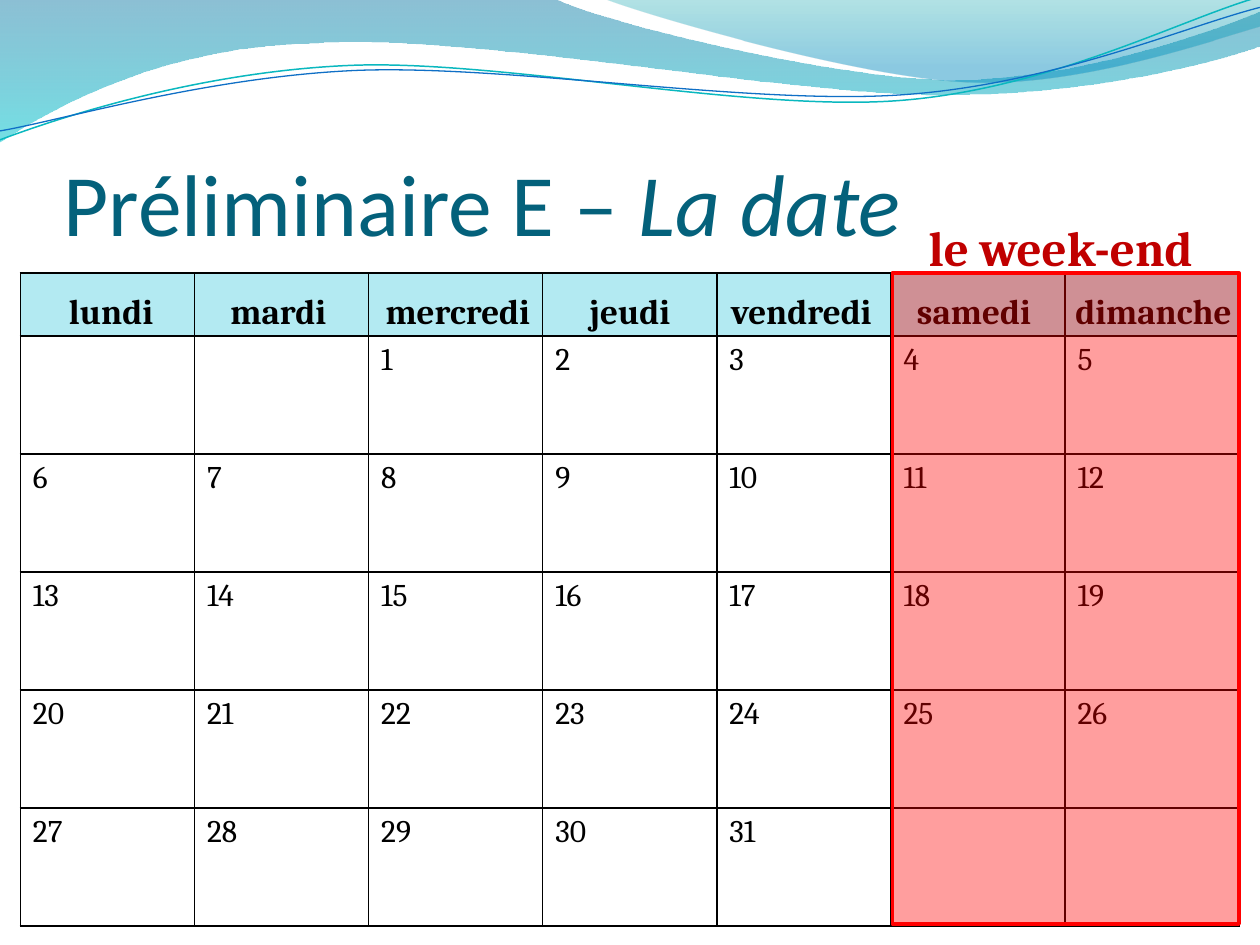
from dataclasses import dataclass

from pptx import Presentation
from pptx.dml.color import RGBColor as Rgb
from pptx.enum.shapes import MSO_SHAPE as Shape
from pptx.enum.text import MSO_ANCHOR as Anchor, MSO_AUTO_SIZE as AutoSize, PP_ALIGN as Align
from pptx.oxml.ns import qn
from pptx.util import Cm, Pt
from lxml.etree import SubElement


@dataclass(frozen=True)
class Theme:
    heading: str = "Calibri"
    body: str = "Cambria"
    title_size: float = 50
    weekend_size: float = 28
    weekday_size: float = 20
    day_size: float = 18
    title: str = "04617B"
    ink: str = "000000"
    header: str = "B3EAF2"
    weekend: str = "FF0000"
    weekend_label: str = "C00000"
    teal_line: str = "0AB8BF"
    blue_line: str = "0F6FC6"
    wide_wave: tuple = ((0, "0074A1", 45), (1, "00C6CF", 55))
    right_wave: tuple = ((0, "00A1A9", 30), (0.8, "008BBF", 45))


WEEKDAYS = (("lundi", 1.07, 2.34), ("mardi", 4.34, 2.54), ("mercredi", 7.45, 3.56),
            ("jeudi", 11.58, 2.24), ("vendredi", 14.4, 3.51), ("samedi", 18.16, 2.95),
            ("dimanche", 21.31, 3.89))
LEFT, TOP = 0.41, 5.5
COLUMN, HEADER_ROW, WEEK_ROW = 3.51, 1.27, 2.38
WEEKS, LAST_DAY, FIRST_COLUMN = 5, 31, 2

WIDE_WAVE = [(0, 0), (11.18, -0.03), (12.09, 0.43, 16.87, 1.6, 19.25, 1.6),
             (21.67, 1.6, 24.33, 0.66, 25.4, 0.23), (25.43, 0.91),
             (24.97, 1.12, 22.1, 1.93, 18.95, 1.91), (15.8, 1.91, 9.7, 0.71, 6.53, 0.86),
             (3.28, 0.91, 1.17, 2.11, -0.03, 2.87), (0, 0)]
RIGHT_WAVE = [(12.17, -0.03), (12.93, 0.28, 17.32, 1.57, 19.53, 1.65),
              (21.74, 1.75, 24.41, 0.81, 25.4, 0.53), (25.4, 0), (12.17, -0.03)]
TEAL_CURVE = [(0, 2.82), (1.22, 2.36, 4.01, 1.45, 7.04, 1.32),
              (10.03, 1.19, 15.06, 2.26, 18.11, 2.03), (21.16, 1.8, 23.83, 0.38, 25.35, -0.05)]
BLUE_CURVE = [(0, 2.64), (1.19, 2.44, 4.17, 1.55, 7.19, 1.42),
              (10.24, 1.3, 15.16, 2.13, 18.21, 1.91), (21.23, 1.7, 23.9, 0.53, 25.4, 0.15)]


def set_opacity(fill_element, percent):
    for color in fill_element.iter(qn("a:srgbClr")):
        SubElement(color, qn("a:alpha")).set("val", str(percent * 1000))


def bend(outline, segments):
    edges = list(outline.element.iter(qn("a:lnTo")))
    for edge, segment in zip(edges, segments):
        if len(segment) == 2:
            continue
        edge.tag = qn("a:cubicBezTo")
        edge.clear()
        for x, y in zip(segment[::2], segment[1::2]):
            SubElement(edge, qn("a:pt"), x=str(Cm(x) - outline.left), y=str(Cm(y) - outline.top))


class Painter:
    def __init__(self, slide, theme):
        self.slide, self.theme = slide, theme

    def style(self, font, family, size, color, bold=False):
        font.name, font.size, font.bold = family, Pt(size), bold
        font.color.rgb = Rgb.from_string(color)

    def freeform(self, segments, close):
        start, *knots = [(Cm(segment[-2]), Cm(segment[-1])) for segment in segments]
        builder = self.slide.shapes.build_freeform(*start)
        builder.add_line_segments(knots, close=close)
        outline = builder.convert_to_shape()
        bend(outline, segments[1:])
        outline.shadow.inherit = False
        return outline

    def wave(self, segments, stops):
        band = self.freeform(segments, True)
        band.line.fill.background()
        band.fill.gradient()
        band.fill.gradient_angle = 270
        gradient = band.element.spPr.find(qn("a:gradFill"))
        entries = gradient.iter(qn("a:gs"))
        for stop, entry, (position, color, opacity) in zip(
                band.fill.gradient_stops, entries, stops):
            stop.position = position
            stop.color.rgb = Rgb.from_string(color)
            set_opacity(entry, opacity)

    def curve(self, segments, color, width):
        thread = self.freeform(segments, False)
        thread.fill.background()
        thread.line.color.rgb = Rgb.from_string(color)
        thread.line.width = Pt(width)

    def title(self, plain, italic):
        frame = self.slide.shapes.add_textbox(Cm(1.28), Cm(1.95), Cm(23.06), Cm(3.18)).text_frame
        frame.word_wrap, frame.vertical_anchor = True, Anchor.BOTTOM
        frame.margin_left = frame.margin_right = frame.margin_bottom = 0
        heading = frame.paragraphs[0]
        self.style(heading.font, self.theme.heading, self.theme.title_size, self.theme.title)
        heading.add_run().text = plain
        topic = heading.add_run()
        topic.text, topic.font.italic = italic, True

    def label(self, text, left, top, width, height, size, color):
        frame = self.slide.shapes.add_textbox(
            Cm(left), Cm(top), Cm(width), Cm(height)).text_frame
        frame.word_wrap, frame.auto_size = False, AutoSize.SHAPE_TO_FIT_TEXT
        caption = frame.paragraphs[0]
        caption.text, caption.alignment = text, Align.CENTER
        self.style(caption.font, self.theme.body, size, color, bold=True)

    def borders(self, cell):
        properties = cell._tc.get_or_add_tcPr()
        for side in ("lnL", "lnR", "lnT", "lnB"):
            edge = SubElement(properties, qn(f"a:{side}"), w=str(Pt(1)))
            SubElement(SubElement(edge, qn("a:solidFill")), qn("a:srgbClr"), val=self.theme.ink)

    def calendar(self):
        columns = len(WEEKDAYS)
        month = self.slide.shapes.add_table(
            WEEKS + 1, columns, Cm(LEFT), Cm(TOP), Cm(COLUMN * columns),
            Cm(HEADER_ROW + WEEKS * WEEK_ROW)).table
        month.first_row = month.horz_banding = False
        for column in month.columns:
            column.width = Cm(COLUMN)
        for week, row in enumerate(month.rows):
            row.height = Cm(WEEK_ROW if week else HEADER_ROW)
            for weekday, cell in enumerate(row.cells):
                self.borders(cell)
                if week == 0:
                    cell.fill.solid()
                    cell.fill.fore_color.rgb = Rgb.from_string(self.theme.header)
                    continue
                cell.fill.background()
                day = (week - 1) * columns + weekday - FIRST_COLUMN + 1
                if 1 <= day <= LAST_DAY:
                    date = cell.text_frame.paragraphs[0]
                    date.text = str(day)
                    self.style(date.font, self.theme.body, self.theme.day_size, self.theme.ink)

    def highlight(self, left, top, width, height, color, opacity):
        zone = self.slide.shapes.add_shape(
            Shape.RECTANGLE, Cm(left), Cm(top), Cm(width), Cm(height))
        zone.shadow.inherit = False
        zone.fill.solid()
        zone.fill.fore_color.rgb = zone.line.color.rgb = Rgb.from_string(color)
        zone.line.width = Pt(2)
        set_opacity(zone.element.spPr.find(qn("a:solidFill")), opacity)


def main():
    deck = Presentation()
    deck.slide_width, deck.slide_height = Cm(25.4), Cm(19.05)
    theme = Theme()
    painter = Painter(deck.slides.add_slide(deck.slide_layouts[6]), theme)

    painter.wave(WIDE_WAVE, theme.wide_wave)
    painter.wave(RIGHT_WAVE, theme.right_wave)
    painter.curve(TEAL_CURVE, theme.teal_line, 0.85)
    painter.curve(BLUE_CURVE, theme.blue_line, 0.75)
    painter.title("Préliminaire E – ", "La date")
    painter.calendar()
    for weekday, left, width in WEEKDAYS:
        painter.label(weekday, left, 5.72, width, 1.11, theme.weekday_size, theme.ink)
    painter.highlight(17.99, TOP, 6.99, 13.13, theme.weekend, 38)
    painter.label("le week-end", 18.32, 4.27, 6.12, 1.45,
                  theme.weekend_size, theme.weekend_label)
    deck.save("out.pptx")


if __name__ == "__main__":
    main()
